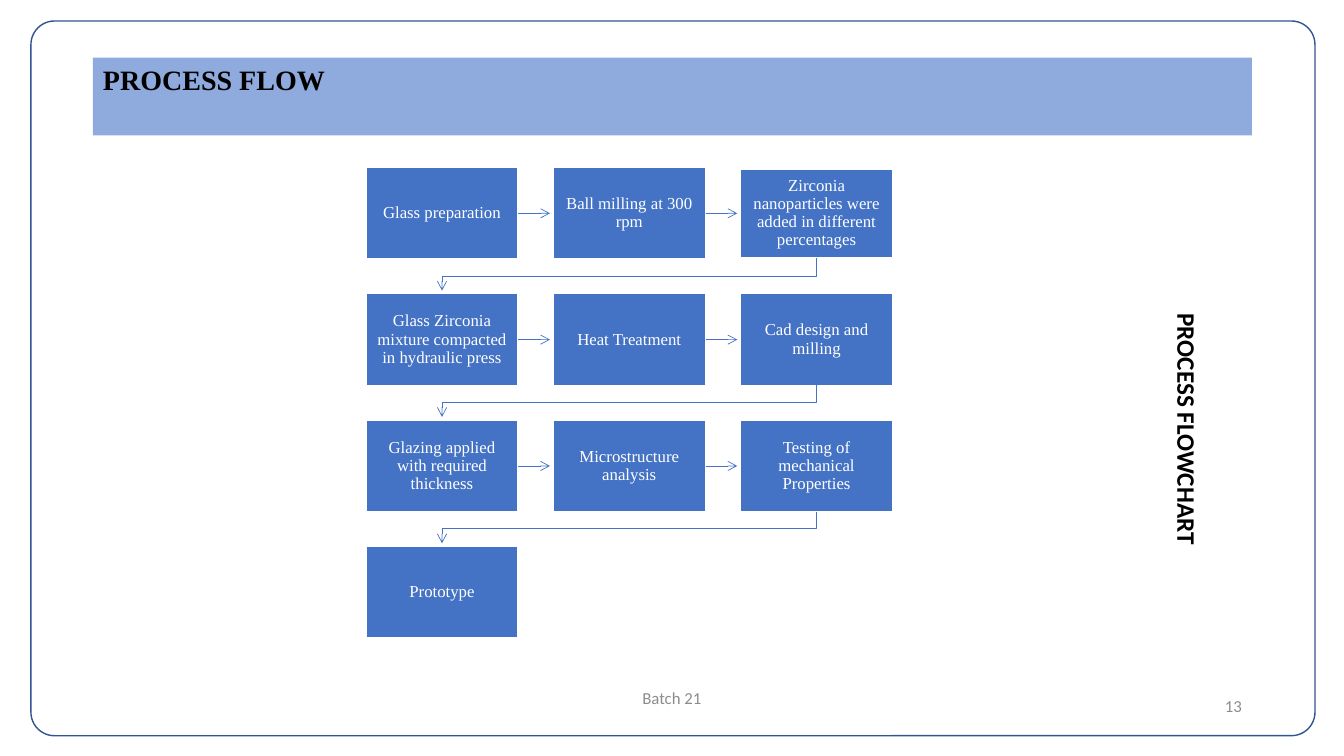
from lxml import etree
from pptx import Presentation
from pptx import util as u
from pptx.dml.color import RGBColor
from pptx.enum import shapes, text
from pptx.oxml.ns import qn

Cm, Pt = u.Cm, u.Pt
HUES = {"frame": "325491", "band": "8FAADC", "step": "4472C4",
        "white": "FFFFFF", "black": "000000", "gray": "8C8C8C"}
SERIF, SANS = "Times New Roman", "Calibri"
LEFT, MID, RIGHT = text.PP_ALIGN.LEFT, text.PP_ALIGN.CENTER, text.PP_ALIGN.RIGHT
TOP, HALF = text.MSO_ANCHOR.TOP, text.MSO_ANCHOR.MIDDLE
STEPS = [
    "Glass preparation", "Ball milling at 300 rpm",
    "Zirconia nanoparticles were added in different percentages",
    "Glass Zirconia mixture compacted in hydraulic press",
    "Heat Treatment", "Cad design and milling",
    "Glazing applied with required thickness",
    "Microstructure analysis", "Testing of mechanical Properties",
    "Prototype",
]
COLS = 3


def hue(name):
    return RGBColor.from_string(HUES[name])


def paint(shape, fill):
    shape.fill.solid()
    shape.fill.fore_color.rgb = hue(fill)


def edge(shape, color, width):
    shape.line.color.rgb = hue(color)
    shape.line.width = Pt(width)


def write(shape, words, size, font, color, align=LEFT, anchor=TOP,
          bold=False, wrap=True):
    frame = shape.text_frame
    frame.auto_size = text.MSO_AUTO_SIZE.NONE
    frame.word_wrap = wrap
    frame.vertical_anchor = anchor
    para = frame.paragraphs[0]
    para.alignment = align
    run = para.add_run()
    run.text = words
    run.font.size = Pt(size)
    run.font.name = font
    run.font.bold = bold
    run.font.color.rgb = hue(color)
    return para


def arrow(line):
    """Thin line with an open head and no shadow."""
    edge(line, "step", 0.5)
    props = line._element.spPr
    etree.SubElement(props.find(qn("a:ln")), qn("a:tailEnd"), type="arrow")
    etree.SubElement(props, qn("a:effectLst"))


def border(slide, x, y, w, h):
    frame = slide.shapes.add_shape(
        shapes.MSO_SHAPE.ROUNDED_RECTANGLE, x, y, w, h)
    frame.adjustments[0] = 0.033
    frame.shadow.inherit = False
    frame.fill.background()
    edge(frame, "frame", 1)


def header(slide, x, y, w, h):
    title = slide.shapes.title
    title.left, title.top, title.width, title.height = x, y, w, h
    paint(title, "band")
    write(title, "PROCESS FLOW", 20, SERIF, "black", bold=True)


def label(slide, x, y, w, h, words, size, color, turn=0, **style):
    box = slide.shapes.add_textbox(x, y, w, h)
    box.rotation = turn
    write(box, words, size, SANS, color, **style)


def step(slide, x, y, w, h, words):
    box = slide.shapes.add_shape(shapes.MSO_SHAPE.RECTANGLE, x, y, w, h)
    box.shadow.inherit = False
    paint(box, "step")
    edge(box, "white", 1)
    para = write(box, words, 12, SERIF, "white", MID, HALF)
    para.line_spacing = 0.9
    frame = box.text_frame
    frame.margin_left = frame.margin_right = Cm(0.23)
    frame.margin_top = frame.margin_bottom = Cm(0.23)
    return box


def across(slide, box, reach):
    """Arrow from the right side of a step toward the next one."""
    x, y = box.left + box.width, box.top + box.height // 2
    line = slide.shapes.add_connector(
        shapes.MSO_CONNECTOR.STRAIGHT, x, y, x + reach, y)
    line.begin_connect(box, 3)
    arrow(line)


def wrap(slide, box, start, end):
    """Bent arrow from the last step of a row to the next row."""
    x, y = box.left + box.width // 2, box.top + box.height
    bend = end - Cm(0.37)
    path = slide.shapes.build_freeform(x, y)
    path.add_line_segments([(x, bend), (start, bend), (start, end)],
                           close=False)
    line = path.convert_to_shape()
    line.fill.background()
    arrow(line)


def flow(slide, x, y, w, h):
    wide, high, gap = Cm(3.84), Cm(2.31), Cm(0.08)
    rows = -(-len(STEPS) // COLS)
    dx = (w - wide) // (COLS - 1)
    dy = (h - high) // (rows - 1)
    for i, words in enumerate(STEPS):
        row, col = divmod(i, COLS)
        trim = Cm(0.04) if i == 2 else 0  # this step is slightly lower
        box = step(slide, x + col * dx, y + row * dy + trim,
                   wide, high - 2 * trim, words)
        if i == len(STEPS) - 1:
            continue
        if col < COLS - 1:
            across(slide, box, dx - wide - gap)
        else:
            wrap(slide, box, x + wide // 2, y + (row + 1) * dy - gap)


def main():
    deck = Presentation()
    deck.slide_width, deck.slide_height = Cm(33.87), Cm(19.05)
    slide = deck.slides.add_slide(deck.slide_layouts[5])
    # Frame and title band
    border(slide, Cm(0.78), Cm(0.53), Cm(32.36), Cm(18.01))
    header(slide, Cm(2.34), Cm(1.45), Cm(29.21), Cm(1.96))
    # Footer and page number
    label(slide, Cm(11.22), Cm(17.09), Cm(11.43), Cm(1.01), "Batch 21",
          12, "gray", align=MID, anchor=HALF)
    label(slide, Cm(23.93), Cm(17.27), Cm(7.62), Cm(1.01), "13",
          12, "gray", align=RIGHT, anchor=HALF)
    # Side caption
    label(slide, Cm(26.72), Cm(10.34), Cm(6.4), Cm(1.02),
          "PROCESS FLOWCHART", 18, "black", turn=90, bold=True, wrap=False)
    # Flowchart
    flow(slide, Cm(9.22), Cm(4.22), Cm(13.28), Cm(11.86))
    deck.save("out.pptx")


if __name__ == "__main__":
    main()
